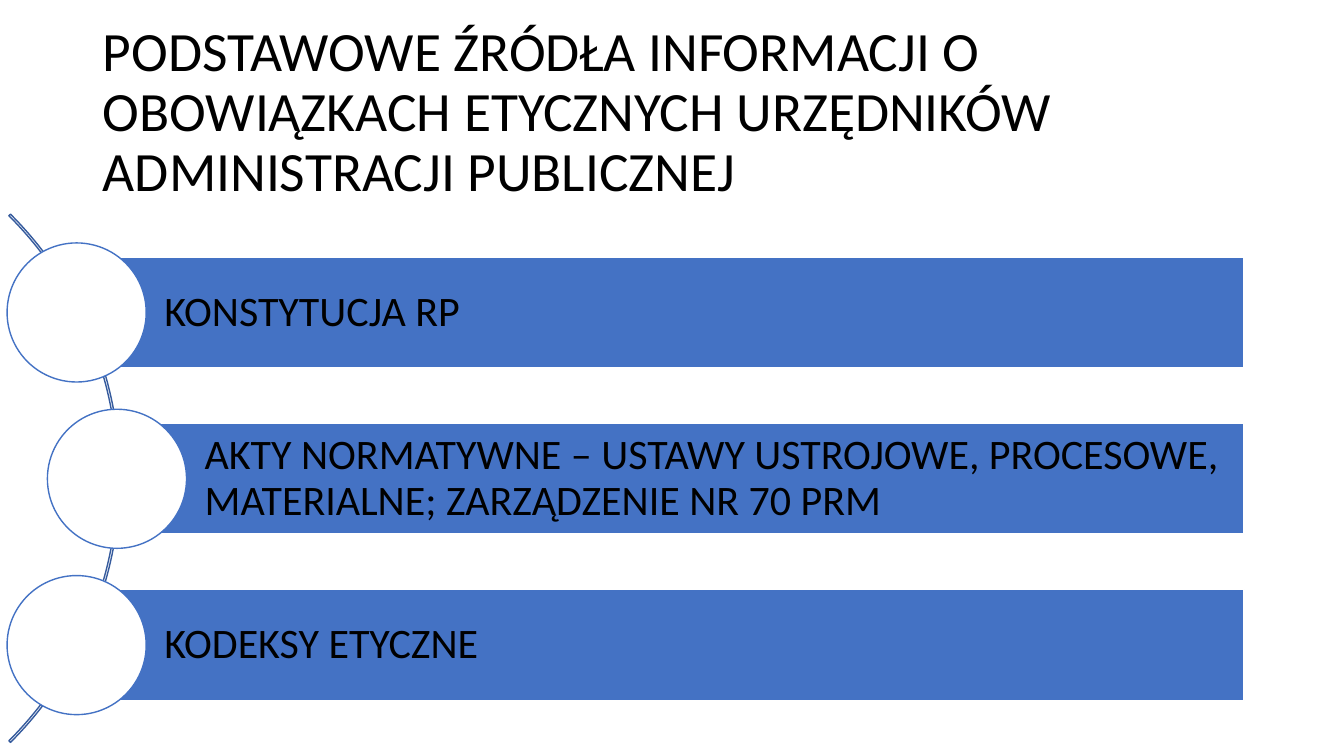
"""Build a slide listing the main sources of officials' ethical duties."""
from pptx import Presentation
from pptx.dml.color import RGBColor
from pptx.enum.shapes import MSO_SHAPE
from pptx.enum.text import MSO_ANCHOR, MSO_AUTO_SIZE, PP_ALIGN
from pptx.util import Inches, Pt

TITLE = "PODSTAWOWE ŹRÓDŁA INFORMACJI O OBOWIĄZKACH ETYCZNYCH URZĘDNIKÓW ADMINISTRACJI PUBLICZNEJ"
SOURCES = [
    ("KONSTYTUCJA RP", 0.76),
    ("AKTY NORMATYWNE – USTAWY USTROJOWE, PROCESOWE, MATERIALNE; ZARZĄDZENIE NR 70 PRM", 1.16),
    ("KODEKSY ETYCZNE", 0.76),
]
BLUE, DARK_BLUE, WHITE, BLACK = "4472C4", "365B9D", "FFFFFF", "000000"
BAR_RIGHT, BAR_HEIGHT = 12.34, 1.1
FIRST_CENTER, ROW_STEP = 3.1, 1.65
CIRCLE_SIZE = 1.38


def color(value):
    return RGBColor.from_string(value)


def add_shape(slide, kind, left, top, width, height, fill, line):
    shape = slide.shapes.add_shape(
        kind, Inches(left), Inches(top), Inches(width), Inches(height))
    shape.shadow.inherit = False
    if fill:
        shape.fill.solid()
        shape.fill.fore_color.rgb = color(fill)
    else:
        shape.fill.background()
    shape.line.color.rgb = color(line)
    shape.line.width = Pt(1)
    return shape


def write(shape, text, size):
    frame = shape.text_frame
    frame.word_wrap = True
    frame.auto_size = MSO_AUTO_SIZE.NONE
    frame.vertical_anchor = MSO_ANCHOR.MIDDLE
    paragraph = frame.paragraphs[0]
    paragraph.text = text
    paragraph.alignment = PP_ALIGN.LEFT
    paragraph.line_spacing = 0.9
    paragraph.font.name = "Calibri"
    paragraph.font.size = Pt(size)
    paragraph.font.color.rgb = color(BLACK)
    return frame


def main():
    deck = Presentation()
    deck.slide_width, deck.slide_height = Inches(13.33), Inches(7.5)
    slide = deck.slides.add_slide(deck.slide_layouts[5])

    title = slide.shapes.title
    title.left, title.top = Inches(0.92), Inches(0.4)
    title.width, title.height = Inches(11.5), Inches(1.45)
    write(title, TITLE, 39.6)

    arc = add_shape(slide, MSO_SHAPE.BLOCK_ARC, -6.22, 1.04, 7.41, 7.41, None, DARK_BLUE)
    for index, value in enumerate((189, 27, 0.003)):
        arc.adjustments[index] = value

    for row, (text, left) in enumerate(SOURCES):
        center = FIRST_CENTER + row * ROW_STEP
        bar = add_shape(slide, MSO_SHAPE.RECTANGLE, left, center - BAR_HEIGHT / 2,
                        BAR_RIGHT - left, BAR_HEIGHT, BLUE, WHITE)
        frame = write(bar, text, 30)
        frame.margin_left = Inches(0.87)
        frame.margin_top = frame.margin_right = frame.margin_bottom = Inches(0.08)
        add_shape(slide, MSO_SHAPE.OVAL, left - CIRCLE_SIZE / 2, center - CIRCLE_SIZE / 2,
                  CIRCLE_SIZE, CIRCLE_SIZE, WHITE, BLUE)

    deck.save("out.pptx")


if __name__ == "__main__":
    main()
